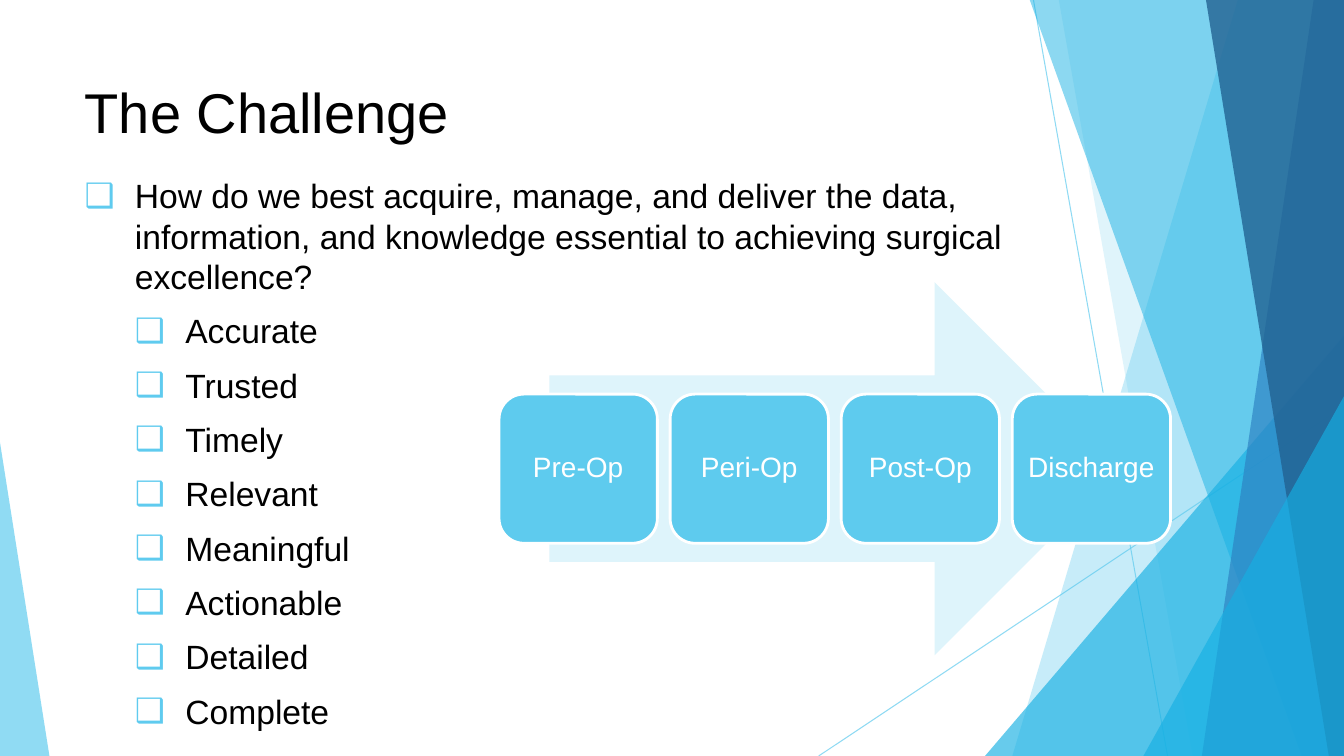
from lxml import etree
from pptx import Presentation
from pptx.dml.color import RGBColor
from pptx.enum.shapes import MSO_CONNECTOR, MSO_SHAPE
from pptx.enum.text import MSO_ANCHOR, MSO_AUTO_SIZE, PP_ALIGN
from pptx.oxml.ns import qn
from pptx.util import Inches, Pt

STRAIGHT = MSO_CONNECTOR.STRAIGHT
TRIANGLE = MSO_SHAPE.ISOSCELES_TRIANGLE
ARROW = MSO_SHAPE.RIGHT_ARROW
CARD = MSO_SHAPE.ROUNDED_RECTANGLE
TOP, MIDDLE = MSO_ANCHOR.TOP, MSO_ANCHOR.MIDDLE
LEFT, CENTER = PP_ALIGN.LEFT, PP_ALIGN.CENTER
NO_FIT = MSO_AUTO_SIZE.NONE

COLORS = {
    "sky": "5FCBEF", "card": "5ECBEE", "cyan": "16B0E3", "blue": "2E83C3",
    "navy": "226292", "pale": "DEF4FB", "white": "FFFFFF", "black": "000000",
}
WIDTH, HEIGHT, BAND_TOP = 13.33, 7.5, -0.01


def paint(fmt, color, alpha=100):
    fmt.solid()
    fmt.fore_color.rgb = RGBColor.from_string(COLORS[color])
    if alpha < 100:
        clr = fmt._xPr.find(qn("a:solidFill"))[0]
        etree.SubElement(clr, qn("a:alpha"), val=str(alpha * 1000))


def write(p, text, size, color, **layout):
    for name, value in layout.items():
        setattr(p, name, value)
    r = p.add_run()
    r.text = text
    for name, value in {"name": "Arial", "size": Pt(size)}.items():
        setattr(r.font, name, value)
    r.font.color.rgb = RGBColor.from_string(COLORS[color])


prs = Presentation()
prs.slide_width, prs.slide_height = Inches(WIDTH), Inches(HEIGHT)
s = prs.slides.add_slide(prs.slide_layouts[5])

for ends in [(10.25, 0, 11.58, HEIGHT), (WIDTH, 4.03, 8.12, HEIGHT)]:
    ray = s.shapes.add_connector(STRAIGHT, *map(Inches, ends))
    ray.line.width = Pt(0.75)
    paint(ray.line.fill, "sky", 69)
    etree.SubElement(ray._element.spPr, qn("a:effectLst"))

facets = [
    ("band", (12.28, 10.04), "sky", 35),
    ("band", (10.5, 11.83), "sky", 20),
    ("triangle", (9.77, 3.33, 3.56, 1), "cyan", 65),
    ("band", (10.21, 12.91), "cyan", 49),
    ("band", (13.03, 11.92), "blue", 69),
    ("band", (11.96, 13.18), "navy", 80),
    ("triangle", (11.34, 3.93, 1.99, 1), "cyan", 65),
    ("triangle", (0, 4.39, 0.49, 0), "sky", 69),
]
for kind, geometry, color, alpha in facets:
    if kind == "band":
        top_x, bottom_x = geometry
        fb = s.shapes.build_freeform(Inches(top_x), Inches(BAND_TOP))
        corners = [(WIDTH, BAND_TOP), (WIDTH, HEIGHT), (bottom_x, HEIGHT)]
        fb.add_line_segments([(Inches(x), Inches(y)) for x, y in corners])
        sp = fb.convert_to_shape()
    else:
        x, y, w, apex = geometry
        sp = s.shapes.add_shape(TRIANGLE, *map(Inches, (x, y, w, HEIGHT - y)))
        sp.adjustments[0] = apex
    paint(sp.fill, color, alpha)
    sp.line.fill.background()
    sp.shadow.inherit = False

title = s.shapes.title
body = s.shapes.add_textbox(0, 0, 0, 0)
for sp, y, h in [(title, 0.67, 1.44), (body, 1.64, 5.64)]:
    for name, value in {"left": 0.74, "top": y, "width": 9.4, "height": h}.items():
        setattr(sp, name, Inches(value))
    frame = {"word_wrap": True, "auto_size": NO_FIT, "vertical_anchor": TOP}
    for side in ("left", "top", "right", "bottom"):
        frame[f"margin_{side}"] = Inches(0.1)
    for name, value in frame.items():
        setattr(sp.text_frame, name, value)
write(title.text_frame.paragraphs[0], "The Challenge", 40, "black", alignment=LEFT)

question = ("How do we best acquire, manage, and deliver the data, information, "
            "and knowledge essential to achieving surgical excellence?")
qualities = ["Accurate", "Trusted", "Timely", "Relevant",
             "Meaningful", "Actionable", "Detailed", "Complete"]
tf = body.text_frame
for i, text in enumerate([question] + qualities):
    p = tf.add_paragraph() if i else tf.paragraphs[0]
    level = min(i, 1)
    write(p, text, 24, "black", level=level, space_before=Pt(10 * level))
    pPr = p._p.get_or_add_pPr()
    pPr.set("marL", str(Inches(0.5 + 0.5 * level)))
    pPr.set("indent", str(Inches(-0.5)))
    bullet_color = etree.SubElement(pPr, qn("a:buClr"))
    etree.SubElement(bullet_color, qn("a:srgbClr"), val=COLORS["sky"])
    etree.SubElement(pPr, qn("a:buFont"), typeface="Arial")
    etree.SubElement(pPr, qn("a:buChar"), char="❑")

arrow = s.shapes.add_shape(ARROW, *map(Inches, (5.45, 2.8, 5.67, 3.7)))
paint(arrow.fill, "pale")
arrow.line.fill.background()
arrow.shadow.inherit = False

stages = ["Pre-Op", "Peri-Op", "Post-Op", "Discharge"]
first_x, last_x = 4.95, 10.04
pitch = (last_x - first_x) / (len(stages) - 1)
for i, stage in enumerate(stages):
    box = (first_x + i * pitch, 3.91, 1.57, 1.48)
    sp = s.shapes.add_shape(CARD, *map(Inches, box))
    paint(sp.fill, "card")
    paint(sp.line.fill, "white")
    sp.line.width = Pt(2)
    sp.shadow.inherit = False
    tf = sp.text_frame
    tf.vertical_anchor = MIDDLE
    tf.margin_left = tf.margin_right = Inches(0.08)
    write(tf.paragraphs[0], stage, 20, "white", alignment=CENTER,
          line_spacing=0.9, space_after=Pt(7))

prs.save("out.pptx")
